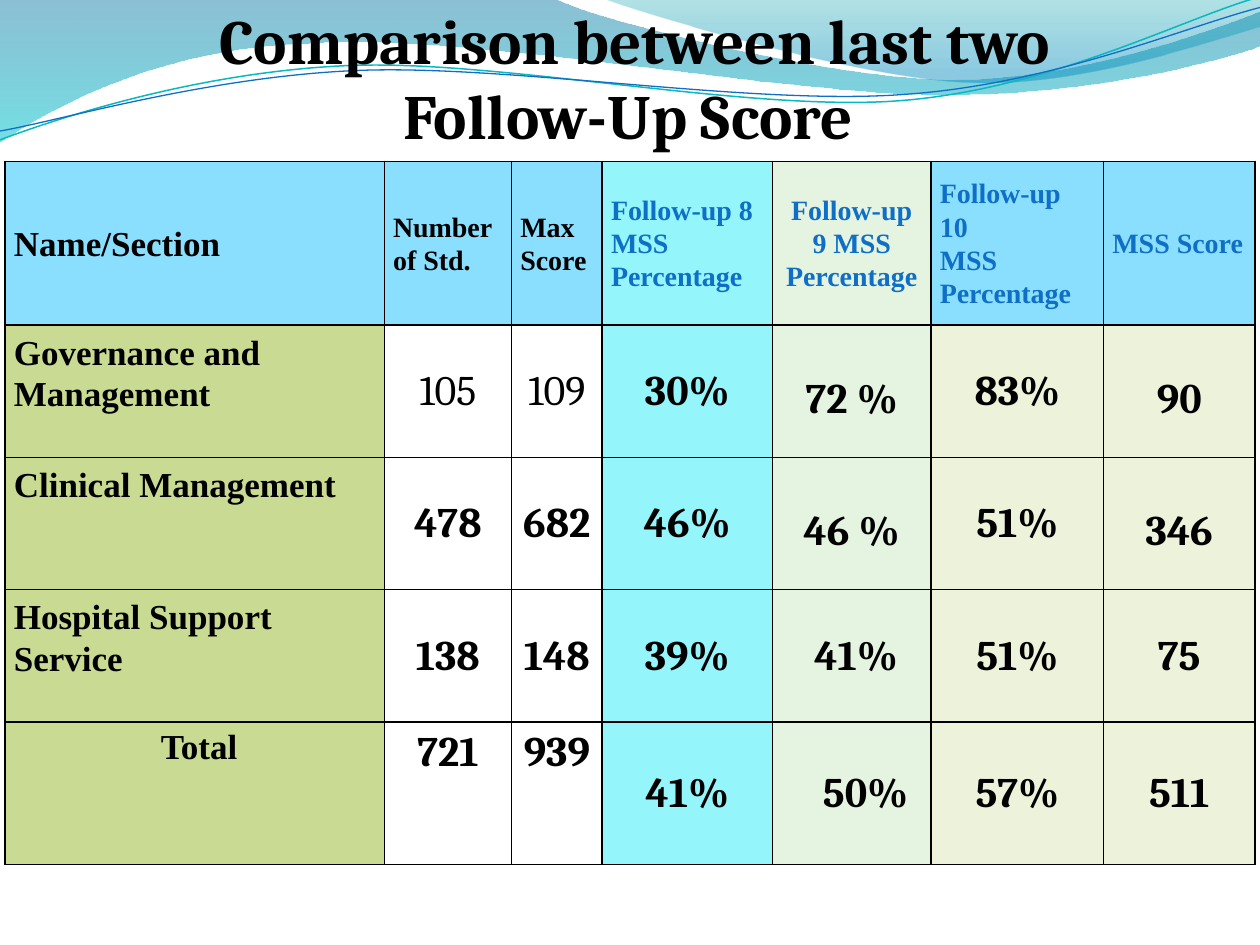
from dataclasses import dataclass
from math import cos, radians, sin
from typing import Optional

from lxml.etree import SubElement as Sub
from pptx import Presentation
from pptx.dml.color import RGBColor
from pptx.enum.text import MSO_ANCHOR as Anchor, PP_ALIGN as Align
from pptx.oxml.ns import qn
from pptx.util import Inches, Pt

COLS = [3.01, 1.01, 0.72, 1.35, 1.26, 1.37, 1.2]
ROWS = [1.3, 1.05, 1.05, 1.05, 1.13]
BLACK, BLUE, SKY, AQUA = "000000", "0F6FC6", "8ADFFF", "94F5FA"
MINT, CREAM, OLIVE = "E5F4E0", "EDF3DB", "C9DA92"
TINTS = [OLIVE, None, None, AQUA, MINT, CREAM, CREAM]
SERIF, ROMAN = "Cambria", "Times New Roman"
WIDE, TIGHT = (0.07, 0.05, 0.07, 0.05), (0.01, 0.01, 0.01, 0)
LOW = (0.01, 0.13, 0.01, 0)
TILT = 2.7


@dataclass
class Wave:
    start: tuple
    steps: list
    stops: tuple = ()
    line: Optional[str] = None
    width: float = 0
    hub: Optional[tuple] = None


@dataclass
class Entry:
    text: str
    tint: Optional[str] = None
    face: str = SERIF
    size: int = 24
    ink: str = BLACK
    bold: bool = True
    align: Align = Align.CENTER
    anchor: Anchor = Anchor.MIDDLE
    inset: tuple = TIGHT
    lead: float = 1.0


WAVES = [
    Wave((0, 0), [
        (4.4, -0.01), (4.76, 0.17, 6.64, 0.63, 7.58, 0.63),
        (8.53, 0.63, 9.58, 0.26, 10, 0.09), (10.01, 0.36),
        (9.83, 0.44, 8.7, 0.76, 7.46, 0.75), (6.22, 0.75, 3.82, 0.28, 2.57, 0.34),
        (1.29, 0.36, 0.46, 0.83, -0.01, 1.13), (0, 0)],
        stops=((0, "0074A1", 45), (1, "00C6CF", 55))),
    Wave((4.79, -0.01), [
        (5.09, 0.11, 6.82, 0.62, 7.69, 0.65), (8.56, 0.69, 9.61, 0.32, 10, 0.21),
        (10, 0), (4.79, -0.01)],
        stops=((0, "00A1A9", 30), (0.8, "008BBF", 45))),
    Wave((0, 1.11), [
        (0.48, 0.93, 1.58, 0.57, 2.77, 0.52), (3.95, 0.47, 5.93, 0.89, 7.13, 0.8),
        (8.33, 0.71, 9.38, 0.15, 9.98, -0.02)],
        line="0AB8BF", width=0.85, hub=(4.99, 0.58)),
    Wave((0, 1.04), [
        (0.47, 0.96, 1.64, 0.61, 2.83, 0.56), (4.03, 0.51, 5.97, 0.84, 7.17, 0.75),
        (8.36, 0.67, 9.41, 0.21, 10, 0.06)],
        line=BLUE, width=0.75, hub=(5, 0.59)),
]


def color(code: str) -> RGBColor:
    return RGBColor.from_string(code)


def turn(dot: tuple, hub: tuple) -> tuple:
    c, s = cos(radians(TILT)), sin(radians(TILT))
    x, y = dot[0] - hub[0], dot[1] - hub[1]
    return hub[0] + x * c - y * s, hub[1] + x * s + y * c


def bend(shape, steps: list) -> None:
    track = next(shape._element.iter(qn("a:path")))
    lines = iter(track.findall(qn("a:lnTo")))
    for step in steps:
        group = [next(lines) for _ in range(len(step) // 2)]
        if len(group) == 3:
            curve = group[0]
            arc = curve.makeelement(qn("a:cubicBezTo"))
            curve.addprevious(arc)
            for line in group:
                arc.append(line[0])
                track.remove(line)


def draw_wave(slide, wave: Wave) -> None:
    dots = [wave.start]
    for step in wave.steps:
        dots += zip(step[::2], step[1::2])
    if wave.hub:
        dots = [turn(dot, wave.hub) for dot in dots]
    dots = [(Inches(x), Inches(y)) for x, y in dots]
    pen = slide.shapes.build_freeform(*dots[0])
    pen.add_line_segments(dots[1:], close=bool(wave.stops))
    shape = pen.convert_to_shape()
    bend(shape, wave.steps)
    shape.shadow.inherit = False
    if wave.line:
        shape.rotation = -TILT
        shape.fill.background()
        shape.line.color.rgb = color(wave.line)
        shape.line.width = Pt(wave.width)
        return
    shape.line.fill.background()
    shape.fill.gradient()
    shape.fill.gradient_angle = 270
    for stop, (place, code, alpha) in zip(shape.fill.gradient_stops, wave.stops):
        stop.position = place
        stop.color.rgb = color(code)
    tags = shape.fill._xPr.iter(qn("a:srgbClr"))
    for tag, (place, code, alpha) in zip(tags, wave.stops):
        Sub(tag, qn("a:alpha"), val=str(alpha * 1000))


def style(para, face: str, size: int, ink: str, bold: bool) -> None:
    font = para.font
    font.name, font.size, font.bold = face, Pt(size), bold
    font.color.rgb = color(ink)


def draw_title(slide) -> None:
    box = slide.shapes.add_textbox(Inches(1.07), Inches(0.75), Inches(7.94), Inches(0.46))
    frame = box.text_frame
    frame.word_wrap = True
    frame.vertical_anchor = Anchor.BOTTOM
    frame.margin_left = frame.margin_right = frame.margin_bottom = 0
    para = frame.paragraphs[0]
    para.text = "Comparison between last two Follow-Up Score "
    para.alignment = Align.CENTER
    style(para, SERIF, 36, BLACK, True)


def edge(cell) -> None:
    props = cell._tc.get_or_add_tcPr()
    for side in ("lnL", "lnR", "lnT", "lnB"):
        line = Sub(props, qn("a:" + side), w=str(Pt(1)))
        Sub(Sub(line, qn("a:solidFill")), qn("a:srgbClr"), val=BLACK)


def fill_cell(cell, entry: Entry) -> None:
    edge(cell)
    if entry.tint:
        cell.fill.solid()
        cell.fill.fore_color.rgb = color(entry.tint)
    else:
        cell.fill.background()
    cell.vertical_anchor = entry.anchor
    (cell.margin_left, cell.margin_top,
     cell.margin_right, cell.margin_bottom) = map(Inches, entry.inset)
    cell.text_frame.text = entry.text
    for para in cell.text_frame.paragraphs:
        para.alignment = entry.align
        para.line_spacing = entry.lead
        style(para, entry.face, entry.size, entry.ink, entry.bold)


def head(text: str, tint: str = SKY, ink: str = BLUE, size: int = 16,
         align: Align = Align.LEFT) -> Entry:
    return Entry(text, tint, ROMAN, size, ink, align=align, inset=WIDE, lead=1.07)


def row(name: str, *marks: str) -> list:
    label = Entry(name, OLIVE, ROMAN, 20, align=Align.LEFT, anchor=Anchor.TOP,
                  inset=WIDE, lead=1.07)
    return [label] + [Entry(mark, tint) for mark, tint in zip(marks, TINTS[1:])]


def entries() -> list:
    top = [
        head("Name/Section", ink=BLACK, size=20), head("Number of Std.", ink=BLACK),
        head("Max Score", ink=BLACK), head("Follow-up 8 MSS Percentage", AQUA),
        head("Follow-up 9 MSS Percentage", MINT, align=Align.CENTER),
        head("Follow-up 10\nMSS Percentage"), head("MSS Score")]
    lead = row("Governance and Management", "105", "109", "30%", "72 %", "83%", "90")
    care = row("Clinical Management", "478", "682", "46%", "46 %", "51%", "346")
    aid = row("Hospital Support Service", "138", "148", "39%", "41%", "51%", "75")
    total = row("Total", "721", "939", "41%", "50%", "57%", "511")
    for entry in lead[1:3]:
        entry.bold = False
    for line in (lead, care):
        line[4].inset = line[6].inset = LOW
    for entry in total[1:3]:
        entry.anchor, entry.inset = Anchor.TOP, WIDE
    total[0].align, total[0].lead = Align.CENTER, 1.0
    total[0].inset = (0.14, 0.05, 0.07, 0.05)
    aid[4].inset = (0.08, 0.01, 0.01, 0)
    total[4].inset = (0.23, 0.01, 0.01, 0)
    return [top, lead, care, aid, total]


def draw_table(slide) -> None:
    table = slide.shapes.add_table(
        len(ROWS), len(COLS), Inches(0.04), Inches(1.28),
        Inches(sum(COLS)), Inches(sum(ROWS))).table
    table.first_row = table.horz_banding = False
    for col, width in zip(table.columns, COLS):
        col.width = Inches(width)
    for line, height, group in zip(table.rows, ROWS, entries()):
        line.height = Inches(height)
        for cell, entry in zip(line.cells, group):
            fill_cell(cell, entry)


deck = Presentation()
deck.slide_width, deck.slide_height = Inches(10), Inches(7.5)
page = deck.slides.add_slide(deck.slide_layouts[6])
for wave in WAVES:
    draw_wave(page, wave)
draw_title(page)
draw_table(page)
deck.save("out.pptx")
